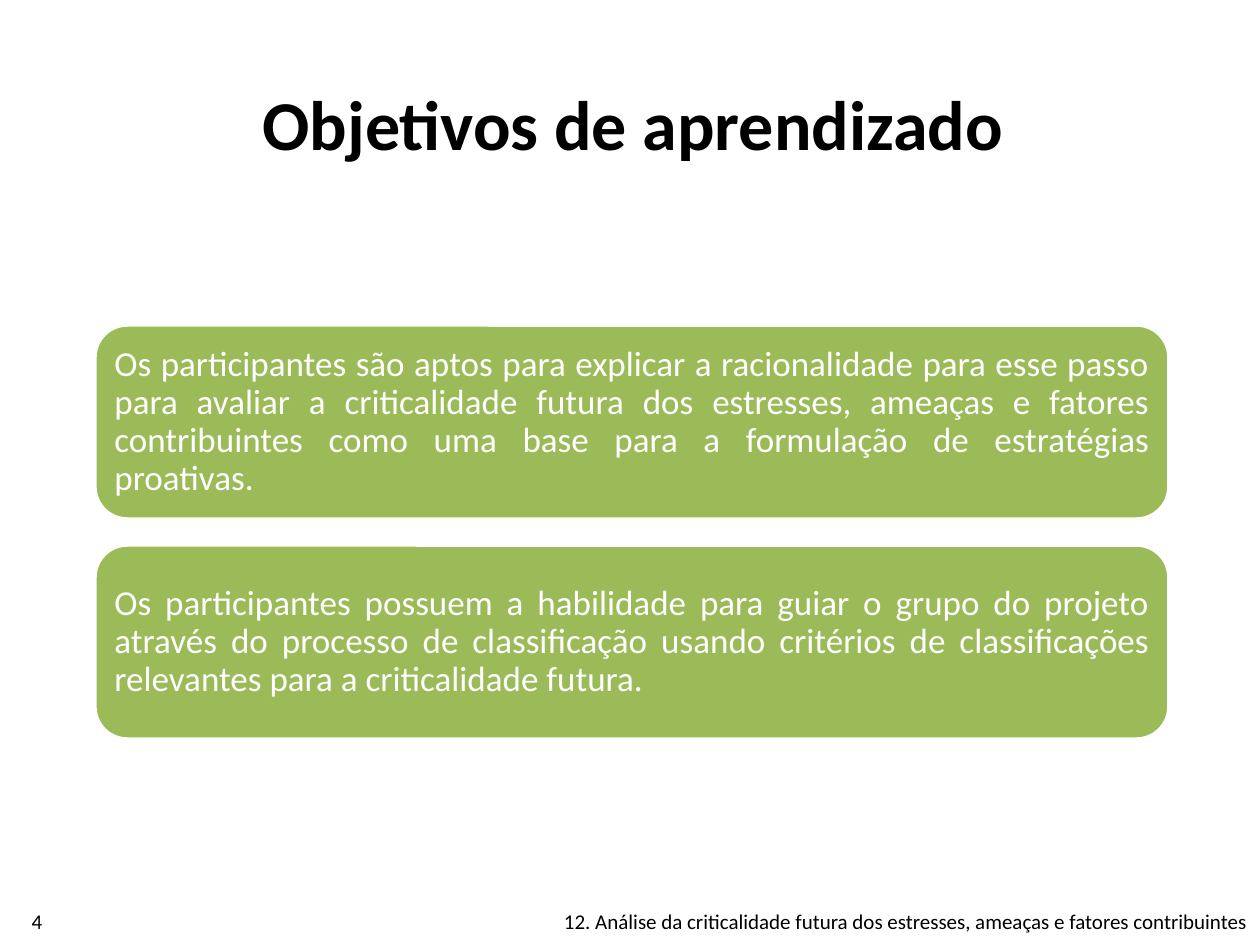
from dataclasses import dataclass

from pptx import Presentation, util as u
from pptx.dml.color import RGBColor
from pptx.enum import shapes, text

SCALE = 914400 / 126


@dataclass(frozen=True)
class Theme:
    font: str = "Calibri"
    ink: str = "000000"
    paper: str = "FFFFFF"
    green: str = "9BBB59"
    head: int = 40
    body: int = 20
    foot: int = 12


@dataclass(frozen=True)
class Box:
    left: int
    top: int
    width: int
    height: int


THEME = Theme()
TITLE = Box(179, 48, 908, 149)
CARD = Box(95, 325, 1074, 194)
PITCH = 220
INSET = 10
GOALS = (
    "Os participantes são aptos para explicar a racionalidade para esse passo "
    "para avaliar a criticalidade futura dos estresses, ameaças e fatores "
    "contribuintes como uma base para a formulação de estratégias proativas.",
    "Os participantes possuem a habilidade para guiar o grupo do projeto "
    "através do processo de classificação usando critérios de classificações "
    "relevantes para a criticalidade futura.",
)
FOOTERS = (
    (Box(-1, 897, 76, 48), "4", text.PP_ALIGN.CENTER),
    (Box(520, 897, 740, 48),
     "12. Análise da criticalidade futura dos estresses, ameaças e fatores contribuintes",
     text.PP_ALIGN.RIGHT),
)


def px(n: int) -> int:
    return round(n * SCALE)


def area(box: Box) -> tuple[int, ...]:
    return px(box.left), px(box.top), px(box.width), px(box.height)


def write(shape, words: str, *, size: int, align, color: str = THEME.ink,
          bold: bool = False):
    """Fill the shape with one paragraph and return that paragraph."""
    frame = shape.text_frame
    frame.word_wrap = True
    frame.vertical_anchor = text.MSO_ANCHOR.MIDDLE
    para = frame.paragraphs[0]
    para.alignment = align
    run = para.add_run()
    run.text = words
    font = run.font
    font.name, font.size, font.bold = THEME.font, u.Pt(size), bold
    font.color.rgb = RGBColor.from_string(color)
    return para


def draw_goal(slide, box: Box, words: str) -> None:
    card = slide.shapes.add_shape(shapes.MSO_SHAPE.ROUNDED_RECTANGLE, *area(box))
    card.shadow.inherit = False
    card.fill.solid()
    card.fill.fore_color.rgb = RGBColor.from_string(THEME.green)
    card.line.color.rgb = RGBColor.from_string(THEME.paper)
    card.line.width = u.Pt(2)
    frame = card.text_frame
    frame.margin_left = frame.margin_right = px(INSET)
    frame.margin_top = frame.margin_bottom = px(INSET)
    para = write(card, words, size=THEME.body, color=THEME.paper,
                 align=text.PP_ALIGN.JUSTIFY)
    para.line_spacing = 0.9
    para.space_after = u.Pt(7)


def main() -> None:
    deck = Presentation()
    deck.slide_width, deck.slide_height = px(1260), px(945)
    slide = deck.slides.add_slide(deck.slide_layouts[5])

    title = slide.shapes.title
    title.left, title.top, title.width, title.height = area(TITLE)
    write(title, "Objetivos de aprendizado", size=THEME.head, bold=True,
          align=text.PP_ALIGN.CENTER)

    for row, words in enumerate(GOALS):
        box = Box(CARD.left, CARD.top + row * PITCH, CARD.width, CARD.height)
        draw_goal(slide, box, words)

    for box, words, align in FOOTERS:
        write(slide.shapes.add_textbox(*area(box)), words, size=THEME.foot,
              align=align)

    deck.save("out.pptx")


if __name__ == "__main__":
    main()
